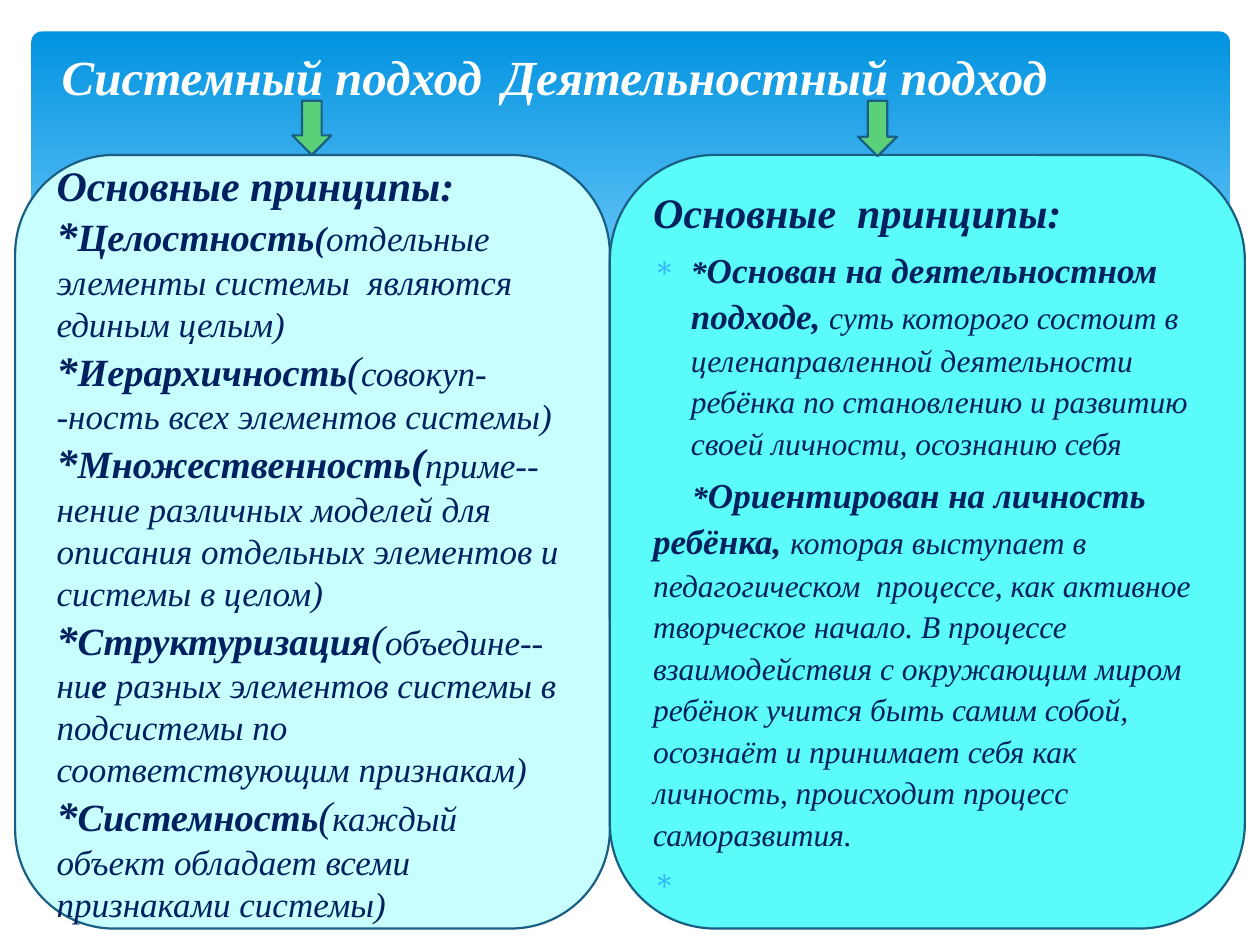
import pptx
import pptx.util
import pptx.dml.color
import pptx.enum.shapes
import pptx.enum.text
import pptx.oxml
import pptx.oxml.ns

Inches = pptx.util.Inches
SHAPES = pptx.enum.shapes.MSO_SHAPE

COLORS = {
    "band_top": "0293E0", "band_bottom": "83D3FE", "title": "FFFFFF",
    "text": "002060", "outline": "195F84", "arrow": "5BD078",
    "system": "C8FEFD", "activity": "5AFBF8", "bullet": "31B6FD",
}
FONT = {"name": "Times New Roman", "italic": True}
BAND = (0.25, 0.25, 9.51, 2.7)
TITLE_BOX = (0.2, 0.13, 9.53, 0.94)
TITLE = "Системный подход\tДеятельностный подход"
TITLE_INSET, TITLE_TAB = 0.29, 4.58
ARROWS = [(2.32, 0.8, 0.31, 0.43), (6.81, 0.8, 0.31, 0.44)]

PLAIN = {"spacing": 1.0, "before": 0, "left": 0, "first": 0, "bullet": None}
LOOSE = {**PLAIN, "spacing": 1.1, "before": 4.5}
BULLETED = {**LOOSE, "left": 0.3, "first": -0.3, "bullet": "∗"}
INDENTED = {**LOOSE, "first": 0.31}

CARDS = [
    {"box": (0.12, 1.23, 4.72, 6.14), "fill": "system", "paragraphs": [
        (PLAIN, [("Основные принципы:", 24, True)]),
        (PLAIN, [("*", 24, True), ("Целостность", 22, True), ("(", 20, True),
                 ("отдельные элементы системы  являются единым целым)", 20, False)]),
        (PLAIN, [("*", 24, True), ("Иерархичность", 22, True), ("(", 24, False),
                 ("совокуп-", 20, False)]),
        (PLAIN, [("-ность всех элементов системы)", 20, False)]),
        (PLAIN, [("*", 24, True), ("Множественность", 22, True), ("(", 24, True),
                 ("приме--нение различных моделей для описания отдельных "
                  "элементов и системы в целом)", 20, False)]),
        (PLAIN, [("*", 24, True), ("Структуризация", 22, True), ("(", 24, False),
                 ("объедине--ни", 20, False), ("е ", 20, True),
                 ("разных элементов системы в подсистемы по "
                  "соответствующим признакам)", 20, False)]),
        (PLAIN, [("*", 24, True), ("Системность", 22, True), ("(", 24, False),
                 ("каждый объект обладает всеми признаками системы)", 20, False)]),
    ]},
    {"box": (4.84, 1.23, 5.04, 6.14), "fill": "activity", "paragraphs": [
        (LOOSE, [("Основные  принципы:", 24, True)]),
        (BULLETED, [("*", 18, True), ("Основан на деятельностном подходе, ", 20, True),
                    ("суть которого состоит в целенаправленной деятельности ребёнка "
                     "по становлению и развитию своей личности, осознанию себя", 18, False)]),
        (INDENTED, [("*", 18, True), ("Ориентирован на личность ребёнка, ", 20, True),
                    ("которая выступает в педагогическом  процессе, как активное "
                     "творческое начало. В процессе взаимодействия с окружающим миром "
                     "ребёнок учится быть самим собой, осознаёт и принимает себя как "
                     "личность, происходит процесс саморазвития.", 18, False)]),
        (BULLETED, [(" ", 18, False)]),
    ]},
]


def rgb(name):
    return pptx.dml.color.RGBColor.from_string(COLORS[name])


def add_shape(slide, kind, box, fill=None):
    shape = slide.shapes.add_shape(kind, *map(Inches, box))
    shape.shadow.inherit = False
    if fill:
        shape.fill.solid()
        shape.fill.fore_color.rgb = rgb(fill)
        shape.line.color.rgb = rgb("outline")
        shape.line.width = pptx.util.Pt(1.25)
    return shape


def add_run(paragraph, text, size, bold, color):
    run = paragraph.add_run()
    run.text = text
    for key, value in {**FONT, "size": pptx.util.Pt(size), "bold": bold}.items():
        setattr(run.font, key, value)
    run.font.color.rgb = rgb(color)


def append_property(properties, xml):
    namespace = pptx.oxml.ns.nsdecls("a")
    properties.append(pptx.oxml.parse_xml(xml.replace(" ", f" {namespace} ", 1)))


def format_paragraph(paragraph, style):
    values = {
        "alignment": pptx.enum.text.PP_ALIGN.LEFT,
        "line_spacing": style["spacing"],
        "space_before": pptx.util.Pt(style["before"]),
    }
    for key, value in values.items():
        setattr(paragraph, key, value)
    properties = paragraph._p.get_or_add_pPr()
    properties.set("marL", str(Inches(style["left"])))
    properties.set("indent", str(Inches(style["first"])))
    if style["bullet"]:
        append_property(properties, f'<a:buClr ><a:srgbClr val="{COLORS["bullet"]}"/></a:buClr>')
        append_property(properties, f'<a:buChar char="{style["bullet"]}"/>')


def set_frame(shape):
    frame = shape.text_frame
    frame.word_wrap = True
    frame.vertical_anchor = pptx.enum.text.MSO_ANCHOR.MIDDLE
    return frame


def add_band(slide):
    band = add_shape(slide, SHAPES.ROUNDED_RECTANGLE, BAND)
    band.adjustments[0] = 0.03
    band.line.fill.background()
    band.fill.gradient()
    band.fill.gradient_angle = 270
    stops = [(0, "band_top"), (0.9, "band_bottom")]
    for stop, (position, color) in zip(band.fill.gradient_stops, stops):
        stop.position = position
        stop.color.rgb = rgb(color)


def add_title(slide):
    frame = set_frame(slide.shapes.add_textbox(*map(Inches, TITLE_BOX)))
    frame.margin_left = Inches(TITLE_INSET)
    paragraph = frame.paragraphs[0]
    format_paragraph(paragraph, PLAIN)
    append_property(
        paragraph._p.get_or_add_pPr(),
        f'<a:tabLst ><a:tab pos="{Inches(TITLE_TAB)}" algn="l"/></a:tabLst>',
    )
    add_run(paragraph, TITLE, 28, True, "title")


def add_card(slide, card):
    shape = add_shape(slide, SHAPES.ROUNDED_RECTANGLE, card["box"], card["fill"])
    frame = set_frame(shape)
    for index, (style, runs) in enumerate(card["paragraphs"]):
        paragraph = frame.add_paragraph() if index else frame.paragraphs[0]
        format_paragraph(paragraph, style)
        for text, size, bold in runs:
            add_run(paragraph, text, size, bold, "text")


def main():
    presentation = pptx.Presentation()
    presentation.slide_width = Inches(10)
    presentation.slide_height = Inches(7.5)
    slide = presentation.slides.add_slide(presentation.slide_layouts[6])
    add_band(slide)
    add_title(slide)
    for card in CARDS:
        add_card(slide, card)
    for box in ARROWS:
        add_shape(slide, SHAPES.DOWN_ARROW, box, "arrow")
    presentation.save("out.pptx")


if __name__ == "__main__":
    main()
